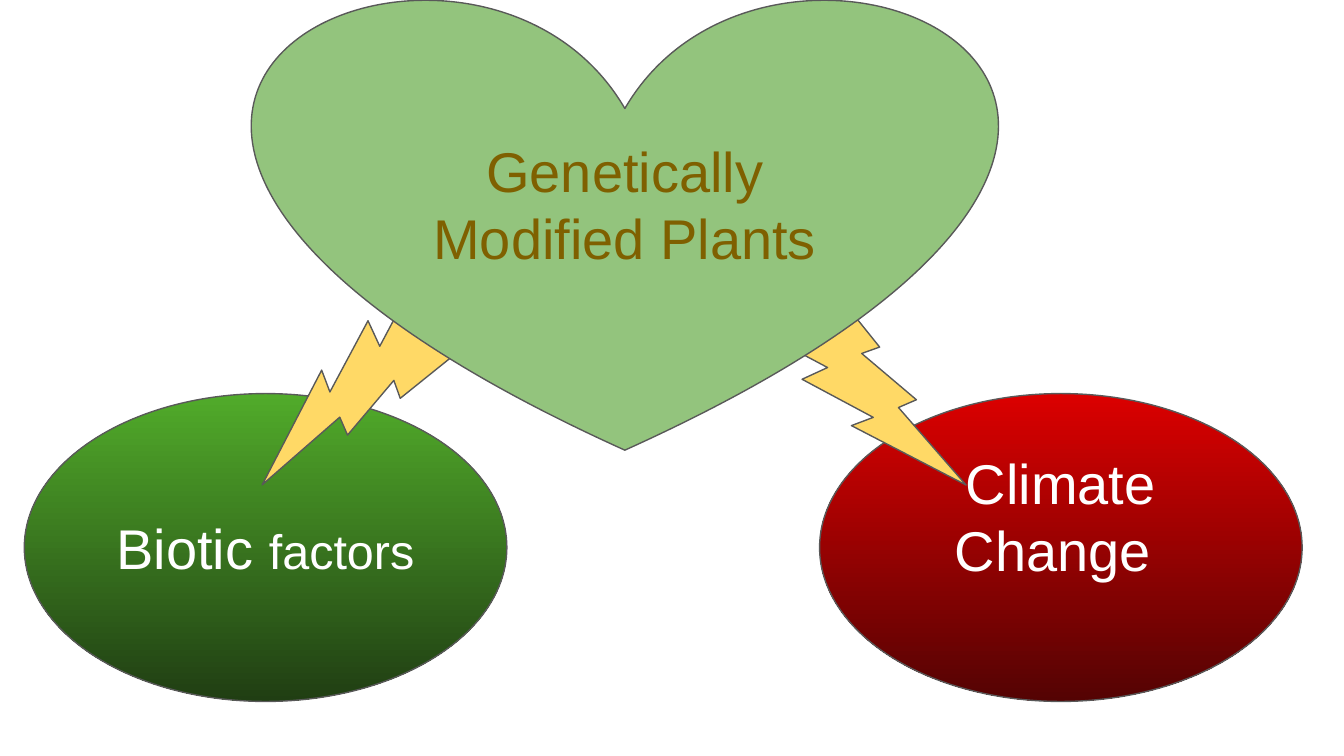
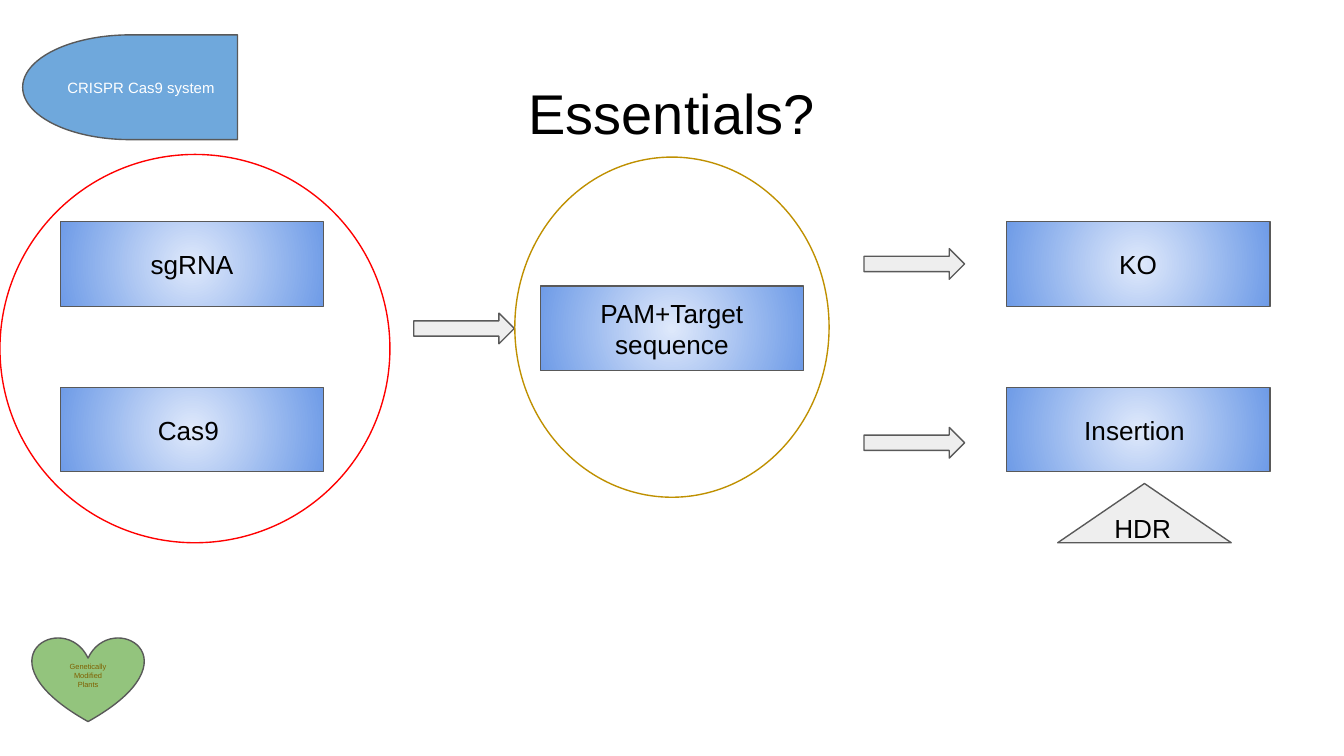
import pptx
import pptx.util
import pptx.dml.color
import pptx.enum.shapes
import pptx.enum.text
import pptx.oxml
import pptx.oxml.ns

Cm = pptx.util.Cm
SHAPE = pptx.enum.shapes.MSO_SHAPE
ALIGN = pptx.enum.text.PP_ALIGN
ANCHOR = pptx.enum.text.MSO_ANCHOR

COLORS = {
    "outline": "595959", "white": "FFFFFF", "black": "000000",
    "leaf": "93C47D", "brown": "7F6000", "bolt": "FFD966",
    "green_top": "51AB2A", "green_bottom": "203E13",
    "red_top": "DB0000", "red_bottom": "540303",
    "box_centre": "DFE9FB", "box_edge": "6E9BE7",
    "badge": "6FA8DC", "grey": "EEEEEE", "red": "FF0000", "gold": "BF9000",
}
FONT = "Arial"
INSET = 0.25
RADIAL = ('<a:path %s path="circle"><a:fillToRect l="50000" t="50000" '
          'r="50000" b="50000"/></a:path>' % pptx.oxml.ns.nsdecls("a"))


class Deck:
    """Holds the style and the current slide."""

    def __init__(self):
        self.prs = pptx.Presentation()
        self.prs.slide_width, self.prs.slide_height = Cm(25.4), Cm(14.29)
        self.s = None

    def color(self, name):
        return pptx.dml.color.RGBColor.from_string(COLORS[name])

    def slide(self, layout):
        self.s = self.prs.slides.add_slide(self.prs.slide_layouts[layout])

    def add_text(self, tf, runs, color, align, anchor, bottom=INSET):
        tf.word_wrap = True
        tf.auto_size = pptx.enum.text.MSO_AUTO_SIZE.NONE
        tf.vertical_anchor = anchor
        tf.margin_left = tf.margin_right = tf.margin_top = Cm(INSET)
        tf.margin_bottom = Cm(bottom)
        p = tf.paragraphs[0]
        p.alignment = align
        for text, size in runs:
            r = p.add_run()
            r.text = text
            r.font.name = FONT
            r.font.size = pptx.util.Pt(size)
            r.font.color.rgb = self.color(color)

    def title(self, text, x, y, w, h):
        sp = self.s.shapes.title
        sp.left, sp.top, sp.width, sp.height = Cm(x), Cm(y), Cm(w), Cm(h)
        self.add_text(sp.text_frame, [(text, 30)], "black", ALIGN.CENTER, ANCHOR.TOP)

    def shape(self, kind, x, y, w, h, fill=None, line="outline"):
        sp = self.s.shapes.add_shape(kind, Cm(x), Cm(y), Cm(w), Cm(h))
        sp.shadow.inherit = False
        sp.line.color.rgb = self.color(line)
        sp.line.width = pptx.util.Pt(0.75)
        if fill is None:
            sp.fill.background()
        else:
            sp.fill.solid()
            sp.fill.fore_color.rgb = self.color(fill)
        return sp

    def label(self, sp, runs, color="black", align=ALIGN.CENTER, bottom=INSET):
        self.add_text(sp.text_frame, runs, color, align, ANCHOR.MIDDLE, bottom)

    def gradient(self, sp, start, end, radial=False):
        sp.fill.gradient()
        sp.fill.gradient_angle = 270
        for stop, position, name in zip(sp.fill.gradient_stops, (0, 1), (start, end)):
            stop.position = position
            stop.color.rgb = self.color(name)
        if radial:
            lin = sp._element.spPr.find(".//" + pptx.oxml.ns.qn("a:lin"))
            lin.getparent().replace(lin, pptx.oxml.parse_xml(RADIAL))

    def oval(self, x, runs, start, end, bottom=INSET):
        sp = self.shape(SHAPE.OVAL, x, 7.44, 9.12, 5.82)
        self.gradient(sp, start, end)
        self.label(sp, runs, "white", bottom=bottom)

    def bolt(self, x, y, rotation=0):
        sp = self.shape(SHAPE.LIGHTNING_BOLT, x, y, 4.04, 3.63, "bolt")
        sp.rotation = rotation

    def heart(self, x, y, w, h, size):
        sp = self.shape(SHAPE.HEART, x, y, w, h, "leaf")
        self.label(sp, [("Genetically Modified Plants", size)], "brown")

    def box(self, text, x, y):
        sp = self.shape(SHAPE.RECTANGLE, x, y, 4.98, 1.6)
        self.gradient(sp, "box_centre", "box_edge", radial=True)
        self.label(sp, [(text, 14)])

    def arrow(self, x, y):
        self.shape(SHAPE.RIGHT_ARROW, x, y, 1.9, 0.58, "grey")

    def badge(self, text, x, y, w, h):
        sp = self.shape(SHAPE.FLOWCHART_DELAY, x, y, w, h, "badge")
        sp._element.spPr.xfrm.set("flipH", "1")
        self.label(sp, [(text, 8)], "white", ALIGN.LEFT)


def plants_slide(deck):
    deck.slide(6)
    # Factors, each struck by a bolt from the heart
    deck.oval(0.46, [("Biotic ", 30), ("factors", 26)], "green_top", "green_bottom")
    deck.bolt(4.75, 5.33, rotation=90)
    # A deeper bottom inset lifts this label by one line
    deck.oval(15.49, [("Climate Change ", 30)], "red_top", "red_bottom", bottom=1.47)
    deck.bolt(14.22, 5.54)
    deck.heart(4.8, -0.1, 14.02, 8.61, 30)


def essentials_slide(deck):
    deck.slide(5)
    deck.title("Essentials?", 0.86, 1.24, 23.67, 1.6)
    deck.badge("CRISPR Cas9 system", 0.43, 0.66, 4.06, 1.98)

    # Components, target and outcomes
    left, centre, right = 1.14, 10.21, 19.02
    upper, middle, lower = 4.19, 5.41, 7.32
    for text, x, y in (("sgRNA", left, upper), ("Cas9 ", left, lower),
                       ("PAM+Target sequence", centre, middle),
                       ("KO", right, upper), ("Insertion ", right, lower)):
        deck.box(text, x, y)

    # Rings and arrows
    deck.shape(SHAPE.OVAL, 0, 2.92, 7.37, 7.34, line="red")
    for x, y in ((7.82, 5.92), (16.33, 8.08), (16.33, 4.7)):
        deck.arrow(x, y)
    hdr = deck.shape(SHAPE.ISOSCELES_TRIANGLE, 19.99, 9.14, 3.28, 1.12, "grey")
    deck.label(hdr, [("HDR", 14)], align=ALIGN.LEFT)
    deck.shape(SHAPE.OVAL, 9.73, 2.97, 5.94, 6.43, line="gold")

    deck.heart(0.61, 12.04, 2.11, 1.6, 4)


def main():
    deck = Deck()
    plants_slide(deck)
    essentials_slide(deck)
    deck.prs.save("out.pptx")


if __name__ == "__main__":
    main()
